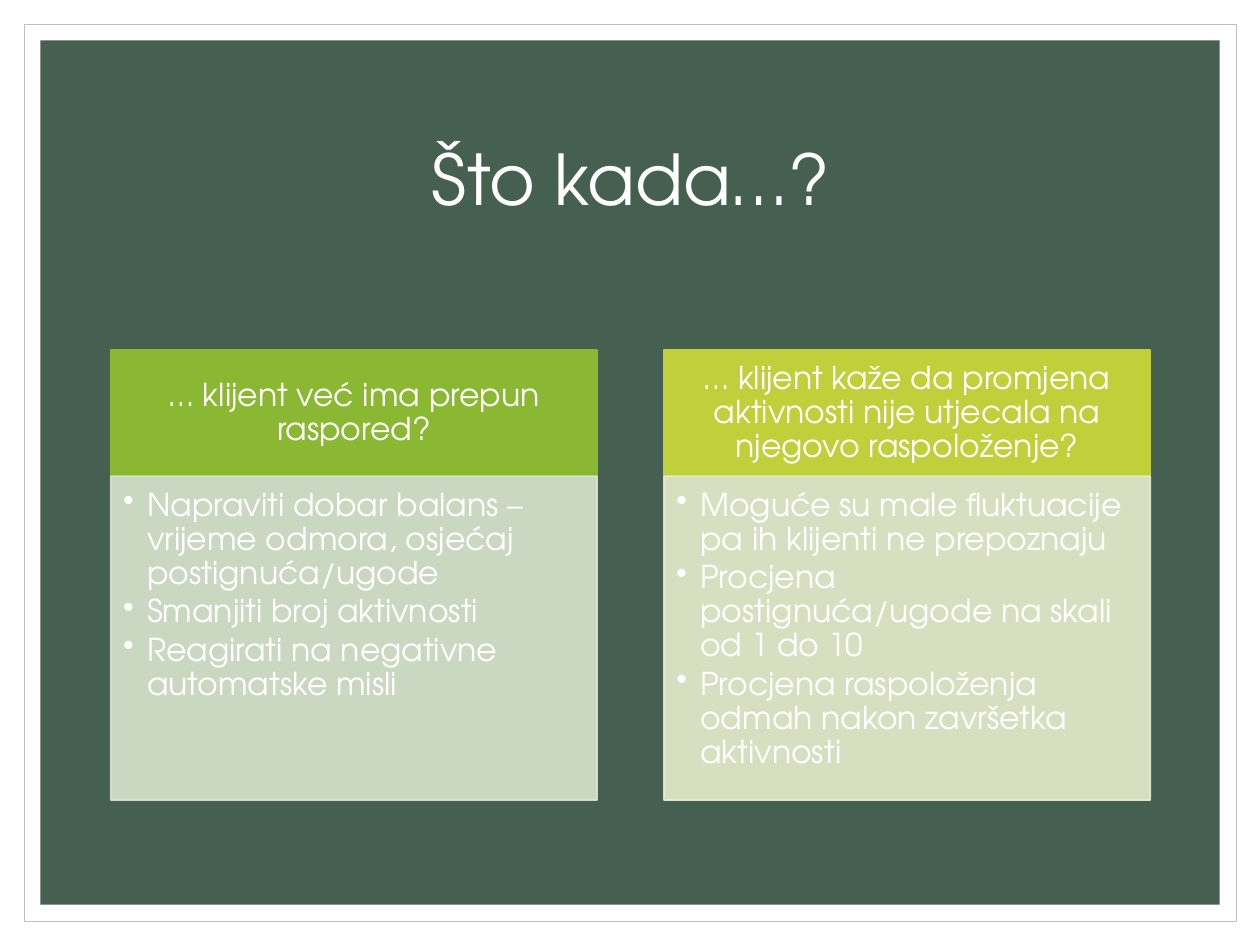
from lxml import etree
from pptx import Presentation
from pptx.dml.color import RGBColor
from pptx.enum.shapes import MSO_SHAPE
from pptx.enum.text import MSO_ANCHOR, MSO_AUTO_SIZE, PP_ALIGN
from pptx.oxml.ns import qn
from pptx.util import Inches, Pt

RECT = MSO_SHAPE.RECTANGLE
TOP, MIDDLE = MSO_ANCHOR.TOP, MSO_ANCHOR.MIDDLE
LEFT, CENTER = PP_ALIGN.LEFT, PP_ALIGN.CENTER
NO_AUTOFIT = MSO_AUTO_SIZE.NONE

FONT = "TeX Gyre Adventor"
WHITE = RGBColor(0xFF, 0xFF, 0xFF)
GREY = RGBColor(0xBF, 0xBF, 0xBF)
DARK_GREEN = RGBColor(0x45, 0x5F, 0x51)
GREEN = RGBColor(0x8A, 0xB8, 0x33)
PALE_GREEN = RGBColor(0xDA, 0xE6, 0xCE)
LIME = RGBColor(0xC0, 0xCF, 0x3A)
PALE_LIME = RGBColor(0xE8, 0xED, 0xCE)

COLUMNS = [
    (GREEN, PALE_GREEN, "… klijent već ima prepun raspored?", [
        "Napraviti dobar balans – vrijeme odmora, osjećaj postignuća/ugode",
        "Smanjiti broj aktivnosti",
        "Reagirati na negativne automatske misli",
    ]),
    (LIME, PALE_LIME,
     "… klijent kaže da promjena aktivnosti nije utjecala na njegovo raspoloženje?", [
         "Moguće su male fluktuacije pa ih klijenti ne prepoznaju",
         "Procjena postignuća/ugode na skali od 1 do 10",
         "Procjena raspoloženja odmah nakon završetka aktivnosti",
     ]),
]
COLUMN_LEFT, COLUMN_STEP, COLUMN_W = 0.88, 4.39, 3.86
HEAD_TOP, HEAD_H, BODY_H = 2.78, 1, 2.57


def add_rect(box, fill, line=None, width=1):
    sp = slide.shapes.add_shape(RECT, *[Inches(v) for v in box])
    sp.shadow.inherit = False
    sp.fill.solid()
    sp.fill.fore_color.rgb = fill
    if line is None:
        sp.line.fill.background()
    else:
        sp.line.color.rgb = line
        sp.line.width = Pt(width)
    return sp


def write(sp, texts, size, align, anchor, insets):
    """Fill a shape with one white paragraph per text."""
    tf = sp.text_frame
    tf.word_wrap = True
    tf.auto_size = NO_AUTOFIT
    tf.vertical_anchor = anchor
    tf.margin_left, tf.margin_top, tf.margin_right, tf.margin_bottom = [
        Inches(v) for v in insets]
    for i, text in enumerate(texts):
        p = tf.add_paragraph() if i else tf.paragraphs[0]
        p.alignment = align
        p.line_spacing = 0.9
        r = p.add_run()
        r.text = text
        r.font.name = FONT
        r.font.size = Pt(size)
        r.font.color.rgb = WHITE
    return tf


prs = Presentation()
prs.slide_width = Inches(10)
prs.slide_height = Inches(7.5)
slide = prs.slides.add_slide(prs.slide_layouts[5])

# Frame and background panel
add_rect((0.19, 0.19, 9.62, 7.12), WHITE, GREY, 0.5)
add_rect((0.32, 0.32, 9.36, 6.86), DARK_GREEN)

# Title, brought in front of the panel
title = slide.shapes.title
title.left, title.top = Inches(0.88), Inches(0.7)
title.width, title.height = Inches(8.25), Inches(1.5)
write(title, ["Što kada…?"], 40, CENTER, MIDDLE, (0.1, 0.05, 0.1, 0.05))
title.element.getparent().append(title.element)

# Two columns: question above, bulleted answers below
for i, (color, pale, question, answers) in enumerate(COLUMNS):
    x = COLUMN_LEFT + i * COLUMN_STEP
    head = add_rect((x, HEAD_TOP, COLUMN_W, HEAD_H), color, color)
    write(head, [question], 18, CENTER, MIDDLE, (0.14, 0.08, 0.14, 0.08))

    body = add_rect((x, HEAD_TOP + HEAD_H, COLUMN_W, BODY_H), pale, pale)
    for clr in body.element.spPr.iter(qn("a:srgbClr")):
        etree.SubElement(clr, qn("a:alpha"), val="90000")
    tf = write(body, answers, 18, LEFT, TOP, (0.1, 0.1, 0.14, 0.16))
    for p in tf.paragraphs:
        p.level = 1
        p.space_after = Pt(2.7)
        pPr = p._p.get_or_add_pPr()
        pPr.set("marL", str(Inches(0.19)))
        pPr.set("indent", str(Inches(-0.19)))
        etree.SubElement(pPr, qn("a:buChar"), char="•")

prs.save("out.pptx")
